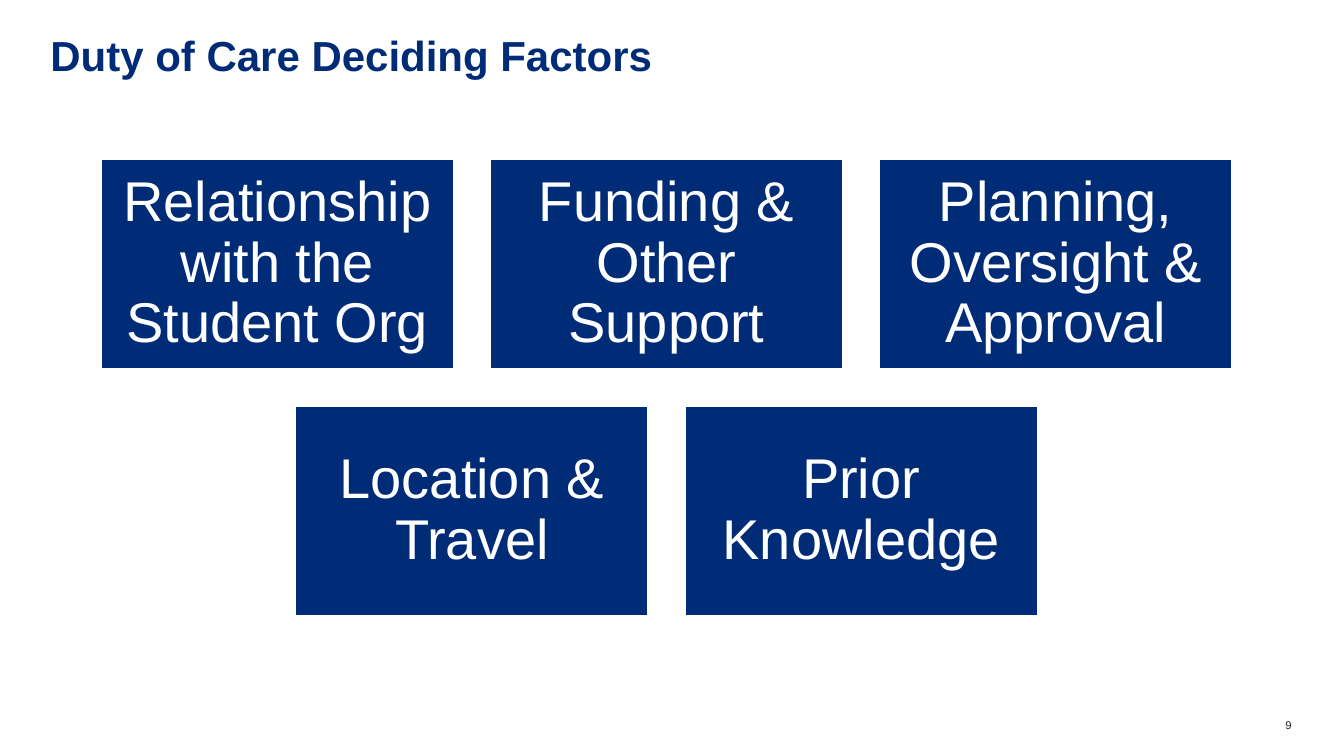
from dataclasses import dataclass

from pptx import Presentation
from pptx.dml.color import RGBColor
from pptx.enum.shapes import MSO_SHAPE
from pptx.enum.text import MSO_ANCHOR, PP_ALIGN
from pptx.util import Inches, Pt


@dataclass(frozen=True)
class Theme:
    font: str = "Arial"
    navy: RGBColor = RGBColor(0x00, 0x2C, 0x77)
    white: RGBColor = RGBColor(0xFF, 0xFF, 0xFF)
    ink: RGBColor = RGBColor(0x20, 0x20, 0x20)
    title_size: int = 30
    factor_size: int = 40
    number_size: int = 8


THEME = Theme()

FACTOR_ROWS = [
    ["Relationship with the Student Org", "Funding & Other Support", "Planning, Oversight & Approval"],
    ["Location & Travel", "Prior Knowledge"],
]
CARD_WIDTH, CARD_HEIGHT, CARD_GAP = 3.51, 2.1, 0.35
GRID_CENTER, GRID_TOP = 6.61, 1.57


def write_text(box, text, *, size, color, bold=False, align=PP_ALIGN.LEFT,
               anchor=MSO_ANCHOR.TOP, spacing=1.0, inset=0):
    frame = box.text_frame
    frame.word_wrap = True
    frame.vertical_anchor = anchor
    frame.margin_left = frame.margin_right = Inches(inset)
    frame.margin_top = frame.margin_bottom = Inches(inset)
    para = frame.paragraphs[0]
    para.alignment = align
    para.line_spacing = spacing
    span = para.add_run()
    span.text = text
    span.font.name = THEME.font
    span.font.size = Pt(size)
    span.font.bold = bold
    span.font.color.rgb = color


def add_label(page, text, left, top, width, height, **text_format):
    box = page.shapes.add_textbox(Inches(left), Inches(top), Inches(width), Inches(height))
    write_text(box, text, **text_format)


def add_factor_card(page, text, left, top):
    card = page.shapes.add_shape(MSO_SHAPE.RECTANGLE, Inches(left), Inches(top),
                                 Inches(CARD_WIDTH), Inches(CARD_HEIGHT))
    card.shadow.inherit = False
    card.fill.solid()
    card.fill.fore_color.rgb = THEME.navy
    card.line.color.rgb = THEME.white
    card.line.width = Pt(2)
    write_text(card, text, size=THEME.factor_size, color=THEME.white, align=PP_ALIGN.CENTER,
               anchor=MSO_ANCHOR.MIDDLE, spacing=0.9, inset=0.17)


def add_factor_grid(page):
    for row, factors in enumerate(FACTOR_ROWS):
        row_width = len(factors) * (CARD_WIDTH + CARD_GAP) - CARD_GAP
        row_left = GRID_CENTER - row_width / 2
        top = GRID_TOP + row * (CARD_HEIGHT + CARD_GAP)
        for column, factor in enumerate(factors):
            add_factor_card(page, factor, row_left + column * (CARD_WIDTH + CARD_GAP), top)


def main():
    deck = Presentation()
    deck.slide_width, deck.slide_height = Inches(13.33), Inches(7.5)
    page = deck.slides.add_slide(deck.slide_layouts[6])
    add_label(page, "Duty of Care Deciding Factors", 0.5, 0.39, 12.31, 0.54,
              size=THEME.title_size, color=THEME.navy, bold=True, spacing=0.8)
    add_factor_grid(page)
    add_label(page, "9", 12.5, 7.13, 0.31, 0.13,
              size=THEME.number_size, color=THEME.ink, align=PP_ALIGN.RIGHT)
    deck.save("out.pptx")


if __name__ == "__main__":
    main()
